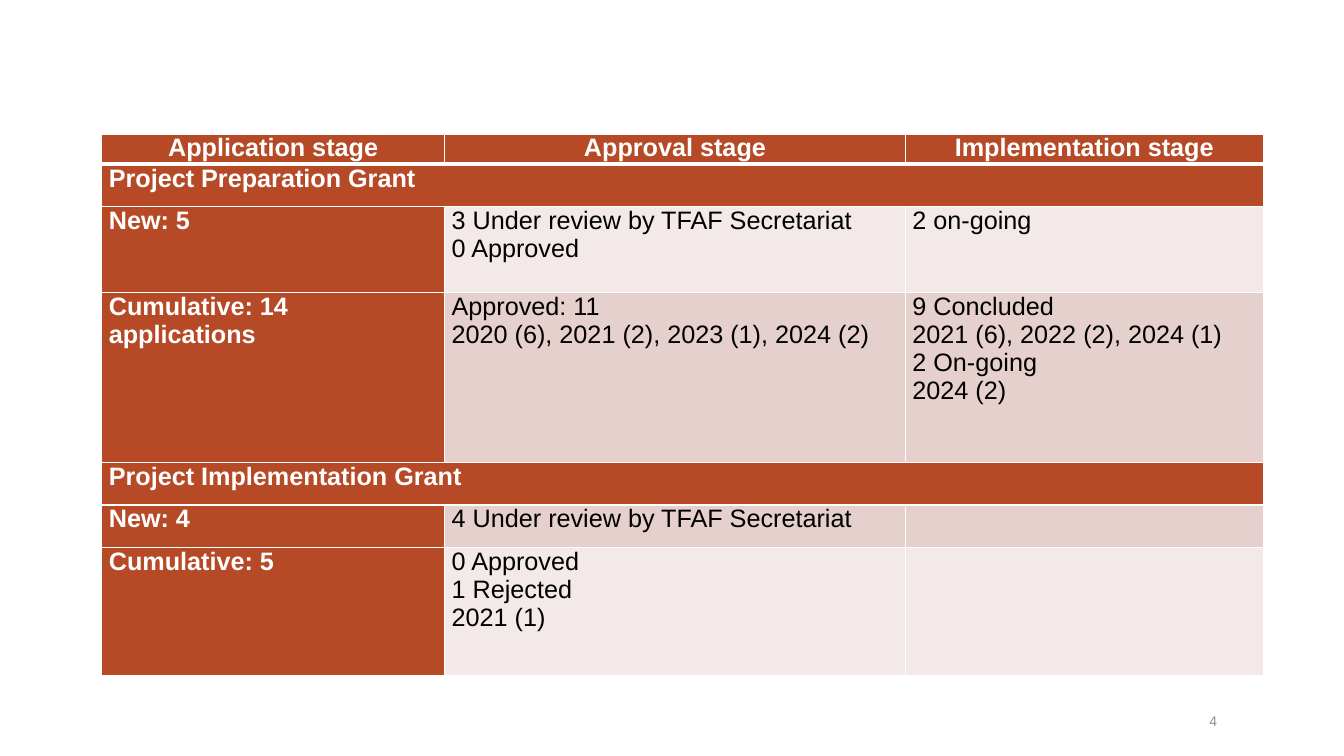
import pptx
import pptx.dml.color
import pptx.enum.text
import pptx.oxml.ns
import pptx.util
from lxml import etree

Inches = pptx.util.Inches
Pt = pptx.util.Pt
RGBColor = pptx.dml.color.RGBColor
Align = pptx.enum.text.PP_ALIGN
Anchor = pptx.enum.text.MSO_ANCHOR

RUST = RGBColor(0xB6, 0x49, 0x26)
PALE = RGBColor(0xF3, 0xE9, 0xE8)
ROSE = RGBColor(0xE5, 0xD0, 0xCD)
WHITE = RGBColor(0xFF, 0xFF, 0xFF)
BLACK = RGBColor(0x00, 0x00, 0x00)
GRAY = RGBColor(0x8C, 0x8C, 0x8C)

COLUMN_WIDTHS = [3.4, 4.57, 3.55]
ROWS = [
    (0.28, RUST, ["Application stage", "Approval stage", "Implementation stage"]),
    (0.42, RUST, ["Project Preparation Grant"]),
    (0.85, PALE, ["New: 5", "3 Under review by TFAF Secretariat\n0 Approved", "2 on-going"]),
    (1.69, ROSE, [
        "Cumulative: 14 applications",
        "Approved: 11\n2020 (6), 2021 (2), 2023 (1), 2024 (2)",
        "9 Concluded\n2021 (6), 2022 (2), 2024 (1)\n2 On-going\n2024 (2)",
    ]),
    (0.42, RUST, ["Project Implementation Grant"]),
    (0.42, ROSE, ["New: 4", "4 Under review by TFAF Secretariat", ""]),
    (1.27, PALE, ["Cumulative: 5", "0 Approved\n1 Rejected\n2021 (1)", ""]),
]


class GrantSlide:
    """Draw the grant status slide in one consistent style."""

    font_name = "Arial"

    def __init__(self, deck):
        self.page = deck.slides.add_slide(deck.slide_layouts[6])

    def fill_text(self, frame, text, size, color, bold=False, align=Align.LEFT):
        frame.text = text
        for paragraph in frame.paragraphs:
            paragraph.alignment = align
            fonts = [span.font for span in paragraph.runs] or [paragraph.font]
            for font in fonts:
                font.name = self.font_name
                font.size = Pt(size)
                font.bold = bold
                font.color.rgb = color

    def border(self, cell, side, width):
        properties = cell._tc.get_or_add_tcPr()
        line = etree.SubElement(properties, pptx.oxml.ns.qn("a:ln" + side), w=str(Pt(width)))
        fill = etree.SubElement(line, pptx.oxml.ns.qn("a:solidFill"))
        etree.SubElement(fill, pptx.oxml.ns.qn("a:srgbClr"), val=str(WHITE))

    def cell(self, cell, text, fill, header, row_index):
        cell.margin_left = cell.margin_right = Inches(0.07)
        cell.margin_top = cell.margin_bottom = 0
        top = 3 if row_index == 1 else 1
        bottom = 3 if row_index == 0 else 1
        for side, width in zip("LRTB", (1, 1, top, bottom)):
            self.border(cell, side, width)
        cell.fill.solid()
        cell.fill.fore_color.rgb = fill
        align = Align.CENTER if row_index == 0 else Align.LEFT
        self.fill_text(cell.text_frame, text, 18, WHITE if header else BLACK, header, align)

    def table(self, left, top, widths, rows):
        height = sum(row[0] for row in rows)
        grid = self.page.shapes.add_table(
            len(rows), len(widths),
            Inches(left), Inches(top), Inches(sum(widths)), Inches(height),
        ).table
        for column, width in zip(grid.columns, widths):
            column.width = Inches(width)
        for row_index, (row_height, fill, texts) in enumerate(rows):
            grid.rows[row_index].height = Inches(row_height)
            padded = texts + [""] * (len(widths) - len(texts))
            for column_index, text in enumerate(padded):
                header = column_index == 0 or fill == RUST
                color = RUST if header else fill
                self.cell(grid.cell(row_index, column_index), text, color, header, row_index)
            if len(texts) == 1:
                grid.cell(row_index, 0).merge(grid.cell(row_index, len(widths) - 1))

    def page_number(self, text, left, top, width, height):
        box = self.page.shapes.add_textbox(
            Inches(left), Inches(top), Inches(width), Inches(height))
        box.text_frame.word_wrap = True
        box.text_frame.vertical_anchor = Anchor.MIDDLE
        self.fill_text(box.text_frame, text, 10, GRAY, align=Align.RIGHT)


def main():
    deck = pptx.Presentation()
    deck.slide_width = Inches(13.33)
    deck.slide_height = Inches(7.5)
    slide = GrantSlide(deck)
    slide.page_number("4", 11.04, 6.95, 1.13, 0.4)
    slide.table(1.01, 1.33, COLUMN_WIDTHS, ROWS)
    deck.save("out.pptx")


if __name__ == "__main__":
    main()
